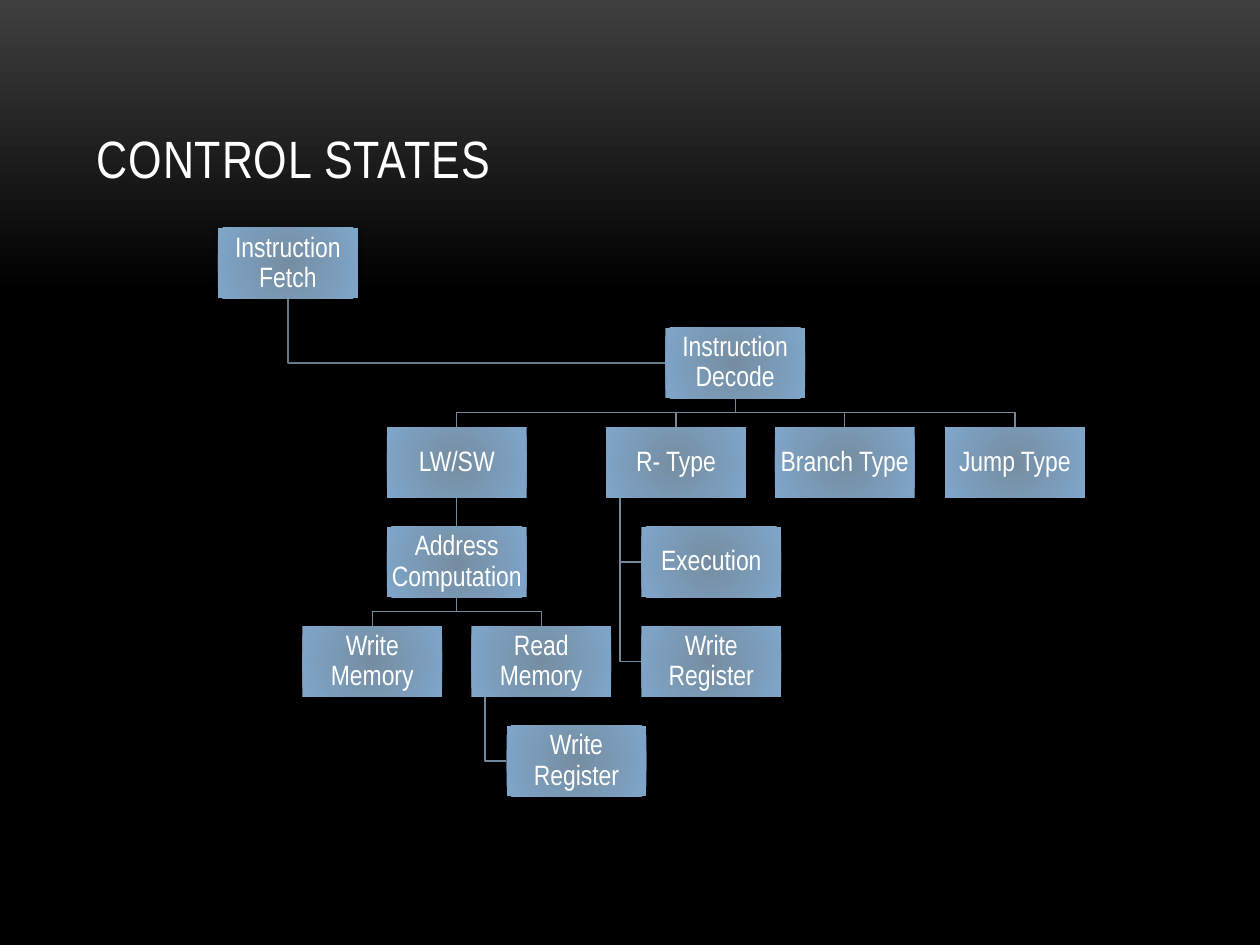
from lxml import etree
from pptx import Presentation
from pptx.dml.color import RGBColor
from pptx.enum.shapes import MSO_CONNECTOR, MSO_SHAPE
from pptx.enum.text import MSO_ANCHOR, PP_ALIGN
from pptx.oxml import parse_xml
from pptx.oxml.ns import nsdecls, qn
from pptx.util import Inches, Pt

RECTANGLE = MSO_SHAPE.RECTANGLE
STRAIGHT = MSO_CONNECTOR.STRAIGHT
MIDDLE, BOTTOM = MSO_ANCHOR.MIDDLE, MSO_ANCHOR.BOTTOM
CENTER = PP_ALIGN.CENTER

WHITE = RGBColor(0xFF, 0xFF, 0xFF)
BLACK = RGBColor(0x00, 0x00, 0x00)
CHARCOAL = RGBColor(0x3F, 0x3F, 0x3F)
BOX_CORE = RGBColor(0x75, 0x8D, 0xA1)
BOX_EDGE = RGBColor(0x7F, 0xA6, 0xCA)
LINK = RGBColor(0x72, 0x89, 0x9D)
ROOT_LINK = RGBColor(0x65, 0x79, 0x8B)

BOX_WIDTH, BOX_HEIGHT = Inches(1.11), Inches(0.56)
FIRST_ROW, ROW_PITCH = Inches(1.81), Inches(0.79)
HANG_INDENT = Inches(0.11)

# key: (text, left in inches, row)
STATES = {
    "fetch": ("Instruction Fetch", 1.73, 0),
    "decode": ("Instruction Decode", 5.28, 1),
    "load_store": ("LW/SW", 3.07, 2),
    "address": ("Address Computation", 3.07, 3),
    "read_memory": ("Read Memory", 3.74, 4),
    "load_register": ("Write Register", 4.02, 5),
    "write_memory": ("Write Memory", 2.4, 4),
    "r_type": ("R- Type", 4.81, 2),
    "execution": ("Execution", 5.09, 3),
    "r_register": ("Write Register", 5.09, 4),
    "branch": ("Branch Type", 6.15, 2),
    "jump": ("Jump Type", 7.5, 2),
}
FORKS = {
    "decode": ("load_store", "r_type", "branch", "jump"),
    "address": ("write_memory", "read_memory"),
}
HANGS = {
    "r_type": ("execution", "r_register"),
    "read_memory": ("load_register",),
}


class StateSlide:
    font_name = "Arial Narrow"
    line_width = Pt(0.75)

    def __init__(self, slide):
        self.slide = slide
        self.shapes = slide.shapes

    def set_gradient(self, fill, first, last, last_position=1):
        fill.gradient()
        start, end = fill.gradient_stops
        start.color.rgb, start.position = first, 0
        end.color.rgb, end.position = last, last_position

    def background(self):
        fill = self.slide.background.fill
        self.set_gradient(fill, CHARCOAL, BLACK, 0.31)
        fill.gradient_angle = 270

    def style_text(self, paragraph, size):
        paragraph.font.name = self.font_name
        paragraph.font.size = Pt(size)
        paragraph.font.color.rgb = WHITE

    def title(self, text):
        box = self.shapes.add_textbox(Inches(0.67), Inches(0.3), Inches(8.67), Inches(1.25))
        frame = box.text_frame
        frame.word_wrap = True
        frame.vertical_anchor = BOTTOM
        paragraph = frame.paragraphs[0]
        run = paragraph.add_run()
        run.text = text
        run._r.get_or_add_rPr().set("spc", "50")
        self.style_text(paragraph, 30)

    def state(self, text, left, row):
        box = self.shapes.add_shape(
            RECTANGLE, Inches(left), FIRST_ROW + row * ROW_PITCH, BOX_WIDTH, BOX_HEIGHT)
        box.line.fill.background()
        self.set_gradient(box.fill, BOX_CORE, BOX_EDGE)
        self.make_radial(box)
        self.cast_shadow(box)
        frame = box.text_frame
        frame.word_wrap = True
        frame.vertical_anchor = MIDDLE
        frame.margin_left = frame.margin_right = Inches(0.01)
        frame.margin_top = frame.margin_bottom = Inches(0.01)
        paragraph = frame.paragraphs[0]
        paragraph.text = text
        paragraph.alignment = CENTER
        paragraph.line_spacing = 0.9
        self.style_text(paragraph, 16)
        return box

    def make_radial(self, shape):
        gradient = shape._element.spPr.find(qn("a:gradFill"))
        gradient.remove(gradient.find(qn("a:lin")))
        circle = etree.SubElement(gradient, qn("a:path"), path="circle")
        etree.SubElement(circle, qn("a:fillToRect"),
                         dict.fromkeys("ltrb", "100000"))

    def cast_shadow(self, shape):
        shape.shadow.inherit = False
        effects = shape._element.spPr.find(qn("a:effectLst"))
        effects.append(parse_xml(
            f'<a:outerShdw {nsdecls("a")} blurRad="{Pt(4)}" dist="{Pt(3.4)}" '
            'dir="5400000" rotWithShape="0"><a:srgbClr val="000000">'
            '<a:alpha val="40000"/></a:srgbClr></a:outerShdw>'))

    def bent_link(self, points, color=LINK):
        builder = self.shapes.build_freeform(*points[0])
        builder.add_line_segments(points[1:], close=False)
        link = builder.convert_to_shape()
        link.shadow.inherit = False
        link.fill.background()
        link.line.color.rgb = color
        link.line.width = self.line_width

    def fork(self, parent, child):
        """Link the parent's bottom to the child's top through the gap between rows."""
        start_x, end_x = (box.left + box.width // 2 for box in (parent, child))
        start_y, end_y = parent.top + parent.height, child.top
        middle_y = (start_y + end_y) // 2
        self.bent_link([(start_x, start_y), (start_x, middle_y),
                        (end_x, middle_y), (end_x, end_y)])

    def hang(self, parent, child, indent=HANG_INDENT, color=LINK):
        """Link the parent's bottom edge down and across to the child's left side."""
        x = parent.left + indent
        y = child.top + child.height // 2
        self.bent_link([(x, parent.top + parent.height), (x, y), (child.left, y)], color)

    def straight_link(self, parent, child):
        link = self.shapes.add_connector(STRAIGHT, 0, 0, 0, 0)
        link.begin_connect(parent, 2)
        link.end_connect(child, 0)
        link.line.color.rgb = LINK
        link.line.width = self.line_width
        etree.SubElement(link._element.spPr, qn("a:effectLst"))


def main():
    presentation = Presentation()
    presentation.slide_width, presentation.slide_height = Inches(10), Inches(7.5)
    page = StateSlide(presentation.slides.add_slide(presentation.slide_layouts[6]))
    page.background()
    page.title("CONTROL STATES")
    boxes = {key: page.state(*state) for key, state in STATES.items()}

    page.hang(boxes["fetch"], boxes["decode"], BOX_WIDTH // 2, ROOT_LINK)
    page.straight_link(boxes["load_store"], boxes["address"])
    for links, draw in ((FORKS, page.fork), (HANGS, page.hang)):
        for parent, children in links.items():
            for child in children:
                draw(boxes[parent], boxes[child])

    presentation.save("out.pptx")


if __name__ == "__main__":
    main()
